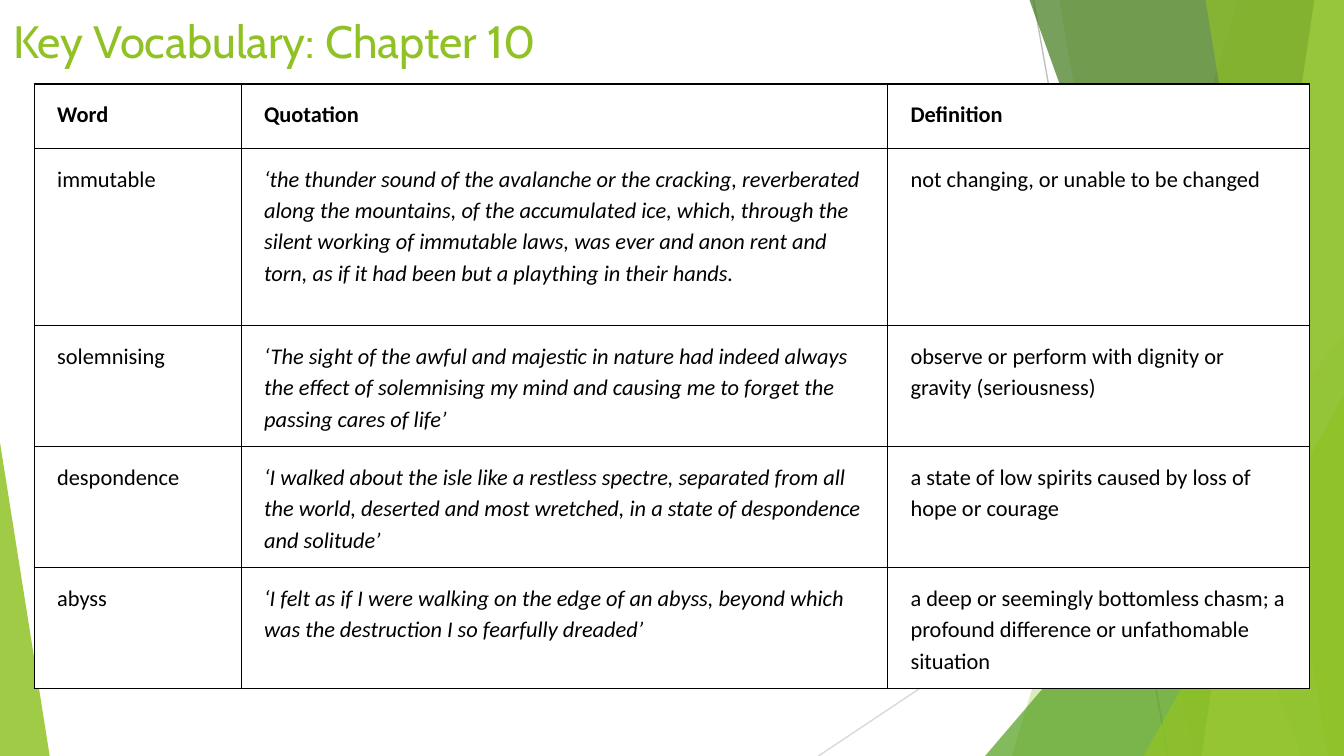
from pptx import Presentation, util as u
from pptx.dml.color import RGBColor
from pptx.enum import shapes as s, text as t
from pptx.oxml import parse_xml
from pptx.oxml.ns import nsdecls
from pptx.oxml.xmlchemy import OxmlElement

deck = Presentation()
deck.slide_width = u.Inches(10)
deck.slide_height = deck.slide_width * 9 // 16
W, H = deck.slide_width, deck.slide_height
slide = deck.slides.add_slide(deck.slide_layouts[6])
LIME = "90C226"


def color(hue):
    return RGBColor.from_string(hue)


def paint(shape, hue, solid):
    """Fill a facet without outline or shadow; solid is its opacity in percent."""
    shape.shadow.inherit = False
    shape.line.fill.background()
    shape.fill.solid()
    shape.fill.fore_color.rgb = color(hue)
    alpha = OxmlElement("a:alpha")
    alpha.set("val", str(solid * 1000))
    shape.fill._xPr.solidFill[0].append(alpha)


# Thin lines behind the facets, in shares of the slide
for x1, y1, x2, y2, hue in [(.769, 0, .869, 1, "BFBFBF"),
                            (1, .537, .609, 1, "D9D9D9")]:
    line = slide.shapes.add_connector(
        s.MSO_CONNECTOR.STRAIGHT, int(W * x1), int(H * y1), int(W * x2), int(H * y2))
    line.line.color.rgb = color(hue)
    line.line.width = u.Pt(.75)
    line._element.spPr.append(OxmlElement("a:effectLst"))

# Bands run from a top and a foot share to the right edge;
# wedges stand on the bottom edge: left, width, height, apex
facets = [
    ("band", (.921, .753), LIME, 30),
    ("band", (.788, .887), LIME, 20),
    ("wedge", (.733, .267, .555, 1), "54A021", 72),
    ("band", (.766, .968), "3F7819", 70),
    ("band", (.978, .894), "C0E474", 70),
    ("band", (.897, .988), LIME, 65),
    ("wedge", (.851, .149, .477, 1), LIME, 80),
    ("wedge", (0, .037, .415, 0), LIME, 85),
]
for kind, form, hue, solid in facets:
    if kind == "band":
        top, foot = form
        path = slide.shapes.build_freeform(int(W * top), 0)
        path.add_line_segments([(W, 0), (W, H), (int(W * foot), H)])
        facet = path.convert_to_shape()
    else:
        left, wide, high, apex = form
        facet = slide.shapes.add_shape(
            s.MSO_SHAPE.ISOSCELES_TRIANGLE, int(W * left), int(H * (1 - high)),
            int(W * wide), int(H * high))
        facet.adjustments[0] = apex
    paint(facet, hue, solid)

# Title
title = slide.shapes.add_textbox(0, 0, int(W * .932), int(H * .107))
frame = title.text_frame
frame.word_wrap = True
frame.vertical_anchor = t.MSO_ANCHOR.MIDDLE
frame.text = "Key Vocabulary: Chapter 10"
font = frame.paragraphs[0].runs[0].font
font.name, font.size = "Cabin", u.Pt(24.3)
font.color.rgb = color(LIME)

# Vocabulary table
rows = [
    ("Word", "Quotation", "Definition"),
    ("immutable",
     "‘the thunder sound of the avalanche or the cracking, reverberated along the "
     "mountains, of the accumulated ice, which, through the silent working of "
     "immutable laws, was ever and anon rent and torn, as if it had been but a "
     "plaything in their hands.",
     "not changing, or unable to be changed"),
    ("solemnising",
     "‘The sight of the awful and majestic in nature had indeed always the effect of "
     "solemnising my mind and causing me to forget the passing cares of life’",
     "observe or perform with dignity or gravity (seriousness)"),
    ("despondence",
     "‘I walked about the isle like a restless spectre, separated from all the world, "
     "deserted and most wretched, in a state of despondence and solitude’",
     "a state of low spirits caused by loss of hope or courage"),
    ("abyss",
     "‘I felt as if I were walking on the edge of an abyss, beyond which was the "
     "destruction I so fearfully dreaded’",
     "a deep or seemingly bottomless chasm; a profound difference or unfathomable "
     "situation"),
]
wides = [1.54, 4.81, 3.14]
highs = [.48, 1.32, .9, .9, .9]
grid = slide.shapes.add_table(
    len(rows), len(wides), int(W * .0255), int(H * .111),
    u.Inches(sum(wides)), u.Inches(sum(highs))).table
grid.first_row = grid.horz_banding = False
for col, wide in zip(grid.columns, wides):
    col.width = u.Inches(wide)
for row, high in zip(grid.rows, highs):
    row.height = u.Inches(high)

for r, words in enumerate(rows):
    for c, word in enumerate(words):
        cell = grid.cell(r, c)
        cell.margin_left = cell.margin_right = u.Inches(.1)
        cell.margin_top = cell.margin_bottom = u.Inches(.1)
        for side in "LRTB":
            cell._tc.get_or_add_tcPr().append(parse_xml(
                f'<a:ln{side} {nsdecls("a")} w="9525"><a:solidFill>'
                f'<a:srgbClr val="000000"/></a:solidFill></a:ln{side}>'))
        cell.fill.solid()
        cell.fill.fore_color.rgb = color("FFFFFF")
        cell.text_frame.text = word
        para = cell.text_frame.paragraphs[0]
        para.line_spacing = 1.15
        for edge in ("marL", "marR"):
            para._p.get_or_add_pPr().set(edge, str(u.Inches(.07)))
        font = para.runs[0].font
        font.name, font.size = "Calibri", u.Pt(12)
        font.color.rgb = color("000000")
        font.bold = r == 0
        font.italic = r > 0 and c == 1

deck.save("out.pptx")
